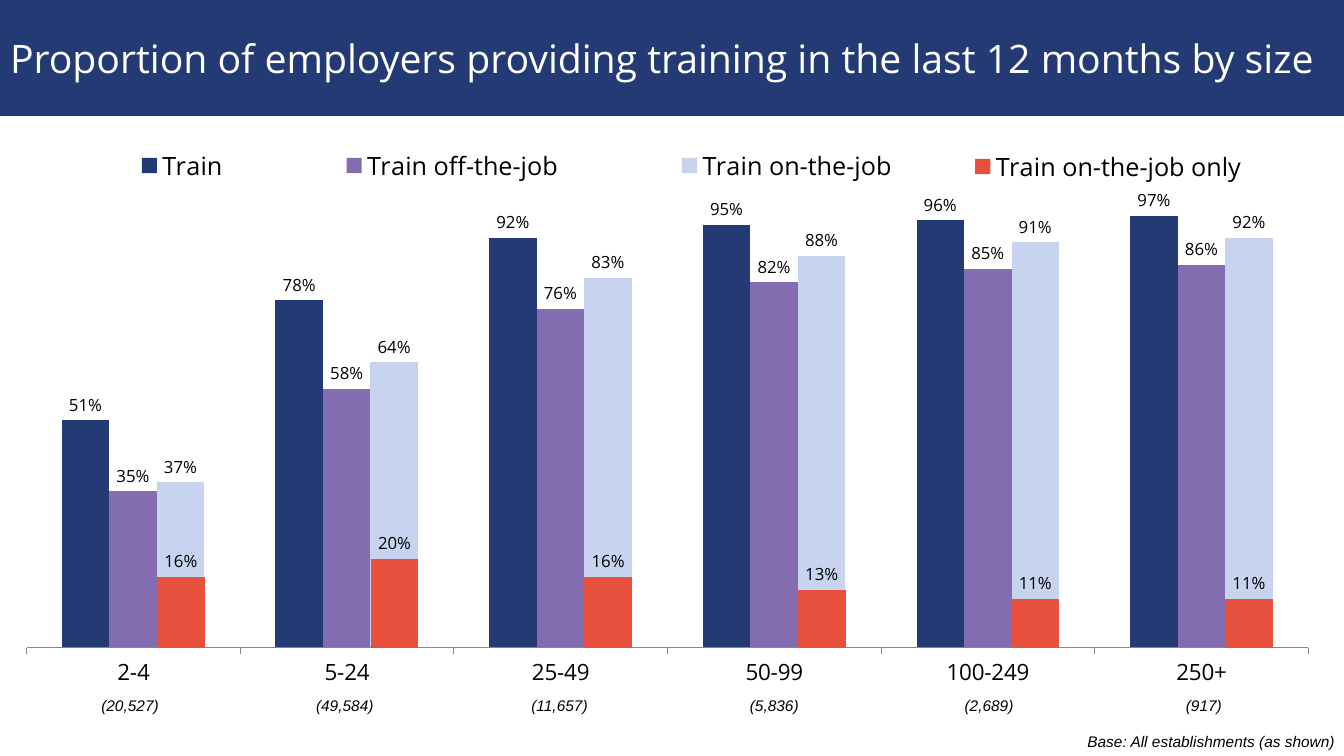
import dataclasses

import lxml.etree
import pptx
import pptx.chart.data
import pptx.dml.color
import pptx.enum.chart
import pptx.enum.text
import pptx.oxml
import pptx.oxml.ns
import pptx.util

Inches = pptx.util.Inches
Pt = pptx.util.Pt
qn = pptx.oxml.ns.qn


@dataclasses.dataclass(frozen=True)
class Theme:
    navy: str = "233A75"
    purple: str = "836DB0"
    pale: str = "C8D3EF"
    red: str = "E8503E"
    axis: str = "868686"
    white: str = "FFFFFF"
    black: str = "000000"
    body_font: str = "Open Sans"
    note_font: str = "Arial"
    title_size: int = 28
    legend_size: int = 18
    axis_size: int = 16
    label_size: int = 12
    note_size: int = 11


def rgb(value):
    return pptx.dml.color.RGBColor.from_string(value)


def format_font(font, name, size, color, italic=False):
    font.name, font.size, font.italic = name, Pt(size), italic
    font.color.rgb = rgb(color)


def write_text(frame, text, align, **font_format):
    frame.word_wrap = True
    para = frame.paragraphs[0]
    para.alignment = align
    span = para.add_run()
    span.text = text
    format_font(span.font, **font_format)


def manual_layout(bounds, inner=False):
    """Layout element for (x, y, w, h) given as fractions of the chart."""
    layout = lxml.etree.Element(qn("c:layout"))
    manual = lxml.etree.SubElement(layout, qn("c:manualLayout"))
    settings = [("layoutTarget", "inner")] if inner else []
    settings += [("xMode", "edge"), ("yMode", "edge"), *zip("xywh", bounds)]
    for tag, value in settings:
        lxml.etree.SubElement(manual, qn(f"c:{tag}")).set("val", str(value))
    return layout


class SlideBuilder:
    PLOT = (0, 0.208, 0.954, 0.637)

    def __init__(self, page, theme):
        self.page, self.theme = page, theme

    def title(self, text, left, top, width, height):
        box = self.page.shapes.title
        box.left, box.top, box.width, box.height = map(Inches, (left, top, width, height))
        box.fill.solid()
        box.fill.fore_color.rgb = rgb(self.theme.navy)
        box.text_frame.vertical_anchor = pptx.enum.text.MSO_ANCHOR.MIDDLE
        box.text_frame.auto_size = pptx.enum.text.MSO_AUTO_SIZE.NONE
        write_text(box.text_frame, text, pptx.enum.text.PP_ALIGN.LEFT,
                   name=self.theme.body_font, size=self.theme.title_size,
                   color=self.theme.white)

    def note(self, text, left, top, width, align):
        box = self.page.shapes.add_textbox(*map(Inches, (left, top, width, 0.29)))
        write_text(box.text_frame, text, align, name=self.theme.note_font,
                   size=self.theme.note_size, color=self.theme.black, italic=True)

    def columns(self, top, categories, series, legend, hidden_entries=(), show_axis=False):
        theme = self.theme
        data = pptx.chart.data.CategoryChartData(number_format="0%")
        data.categories = categories
        for name, values, _ in series:
            data.add_series(name, values)
        chart = self.page.shapes.add_chart(
            pptx.enum.chart.XL_CHART_TYPE.COLUMN_CLUSTERED,
            *map(Inches, (0.26, top, 13.33, 6.92)), data).chart
        format_font(chart.font, theme.body_font, theme.legend_size, theme.black)
        chart.has_title = False

        # Bars and their value labels
        plot = chart.plots[0]
        plot.gap_width, plot.overlap, plot.vary_by_categories = 150, 0, False
        for bars, (_, _, color) in zip(plot.series, series):
            bars.format.fill.solid()
            bars.format.fill.fore_color.rgb = rgb(color)
            labels = bars.data_labels
            labels.show_value = True
            labels.number_format, labels.number_format_is_linked = "0%", False
            labels.position = pptx.enum.chart.XL_LABEL_POSITION.OUTSIDE_END
            format_font(labels.font, theme.body_font, theme.label_size, theme.black)

        # Axes
        scale = chart.value_axis
        scale.minimum_scale, scale.maximum_scale, scale.major_unit = 0, 1, 0.1
        scale.has_major_gridlines = False
        scale.visible = False
        axis = chart.category_axis
        axis.visible = show_axis
        axis.major_tick_mark = pptx.enum.chart.XL_TICK_MARK.OUTSIDE
        axis.format.line.color.rgb = rgb(theme.axis)
        axis.format.line.width = Pt(0.75)
        format_font(axis.tick_labels.font, theme.body_font, theme.axis_size, theme.black)

        # Legend
        chart.has_legend = True
        chart.legend.position = pptx.enum.chart.XL_LEGEND_POSITION.RIGHT
        chart.legend.include_in_layout = False
        format_font(chart.legend.font, theme.body_font, theme.legend_size, theme.black)

        # Fixed plot and legend areas on a transparent background
        space = chart._chartSpace
        area = space.find(".//" + qn("c:plotArea"))
        key = space.find(".//" + qn("c:legend"))
        for parent in (area, key):
            for old in parent.findall(qn("c:layout")):
                parent.remove(old)
        area.insert(0, manual_layout(self.PLOT, inner=True))
        overlay = key.find(qn("c:overlay"))
        for index in hidden_entries:
            entry = lxml.etree.Element(qn("c:legendEntry"))
            lxml.etree.SubElement(entry, qn("c:idx")).set("val", str(index))
            lxml.etree.SubElement(entry, qn("c:delete")).set("val", "1")
            overlay.addprevious(entry)
        overlay.addprevious(manual_layout(legend))
        frame = lxml.etree.Element(qn("c:spPr"))
        lxml.etree.SubElement(frame, qn("a:noFill"))
        line = lxml.etree.SubElement(frame, qn("a:ln"))
        lxml.etree.SubElement(line, qn("a:noFill"))
        space.find(qn("c:chart")).addnext(frame)


def main():
    theme = Theme()
    deck = pptx.Presentation()
    deck.slide_width, deck.slide_height = Inches(13.33), Inches(7.5)
    page = deck.slides.add_slide(deck.slide_layouts[5])
    builder = SlideBuilder(page, theme)
    align = pptx.enum.text.PP_ALIGN

    builder.title("Proportion of employers providing training in the last 12 months by size",
                  0, 0, 13.33, 1.15)

    # All training, then on-the-job only in front of the third column
    sizes = ["2-4", "5-24", "25-49", "50-99", "100-249", "250+"]
    builder.columns(0.57, sizes, [
        ("Train", (0.51, 0.78, 0.92, 0.95, 0.96, 0.97), theme.navy),
        ("Train off-the-job", (0.35, 0.58, 0.76, 0.82, 0.85, 0.86), theme.purple),
        ("Train on-the-job", (0.37, 0.64, 0.83, 0.88, 0.91, 0.92), theme.pale),
    ], legend=(0, 0.11, 0.73, 0.09))
    blank = (None,) * len(sizes)
    builder.columns(0.58, sizes, [
        ("Series 1", blank, theme.pale),
        ("Series 2", blank, theme.purple),
        ("Train on-the-job only", (0.16, 0.2, 0.16, 0.13, 0.11, 0.11), theme.red),
    ], legend=(0.7, 0.11, 0.21, 0.09), hidden_entries=(0, 1), show_axis=True)

    # Base sizes under each category
    bases = ["(20,527)", "(49,584)", "(11,657)", "(5,836)", "(2,689)", "(917)"]
    for index, base in enumerate(bases):
        builder.note(base, 0.69 + 2.13 * index, 6.86, 1.2, align.CENTER)
    builder.note("Base: All establishments (as shown)", 9.16, 7.21, 4.18, align.RIGHT)

    deck.save("out.pptx")


if __name__ == "__main__":
    main()
